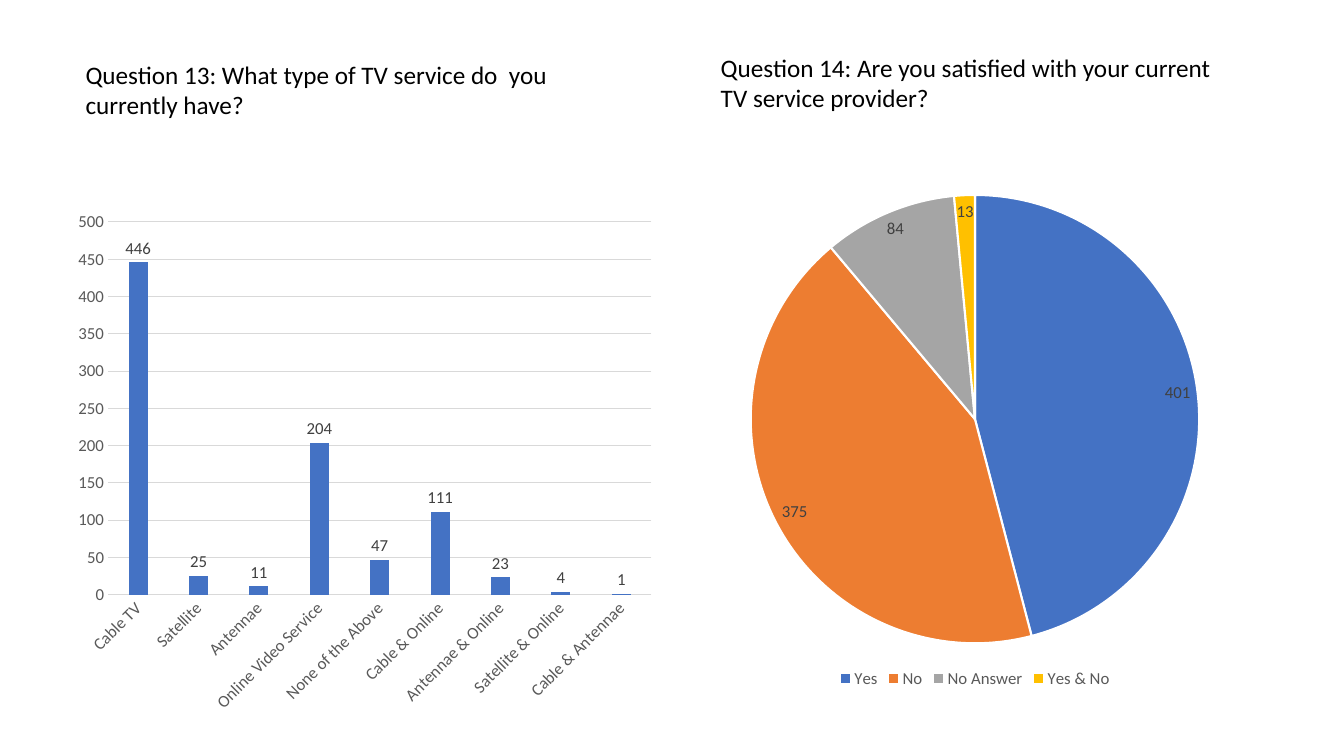
from dataclasses import dataclass

from pptx import Presentation
from pptx import util as u
from pptx.chart import data as cd
from pptx.dml.color import RGBColor
from pptx.enum import chart as ce
from pptx.enum import text as te


@dataclass(frozen=True)
class Theme:
    """Colours, font and type sizes."""
    font: str = "Calibri"
    head: int = 18
    label: int = 12
    base: int = 10
    black: str = "000000"
    dark: str = "404040"
    grey: str = "595959"
    rule: str = "D9D9D9"
    white: str = "FFFFFF"
    fills: tuple[str, ...] = ("4472C4", "ED7D31", "A5A5A5", "FFC000")


@dataclass(frozen=True)
class Box:
    """Place of an item in inches."""
    left: float
    top: float
    width: float
    height: float

    def emu(self) -> list[int]:
        """Give the four lengths."""
        return [u.Inches(n) for n in (self.left, self.top, self.width, self.height)]


@dataclass(frozen=True)
class Query:
    """A survey question with its chart."""
    title: str
    head: Box
    plot: Box
    kind: ce.XL_CHART_TYPE
    votes: dict[str, int]


THEME = Theme()
QUERIES = (
    Query("Question 13: What type of TV service do  you currently have?",
          Box(0.75, 0.54, 5.25, 0.71), Box(0.66, 2, 5.92, 5.17),
          ce.XL_CHART_TYPE.COLUMN_CLUSTERED,
          {"Cable TV": 446, "Satellite": 25, "Antennae": 11,
           "Online Video Service": 204, "None of the Above": 47,
           "Cable & Online": 111, "Antennae & Online": 23,
           "Satellite & Online": 4, "Cable & Antennae": 1}),
    Query("Question 14: Are you satisfied with your current TV service provider?",
          Box(7.05, 0.47, 5.25, 0.71), Box(6.75, 1.54, 5.84, 5.33),
          ce.XL_CHART_TYPE.PIE,
          {"Yes": 401, "No": 375, "No Answer": 84, "Yes & No": 13}),
)


def style(font, size: int, tint: str) -> None:
    """Set face, size and colour of a font."""
    font.name, font.size = THEME.font, u.Pt(size)
    font.color.rgb = RGBColor.from_string(tint)


def paint(fill, tint: str) -> None:
    """Fill with one colour."""
    fill.solid()
    fill.fore_color.rgb = RGBColor.from_string(tint)


def stroke(line, tint: str, width: float) -> None:
    """Set the colour and width of a line."""
    paint(line.fill, tint)
    line.width = u.Pt(width)


def add_head(slide, query: Query) -> None:
    """Write the question above its chart."""
    frame = slide.shapes.add_textbox(*query.head.emu()).text_frame
    frame.word_wrap = True
    frame.auto_size = te.MSO_AUTO_SIZE.SHAPE_TO_FIT_TEXT
    run = frame.paragraphs[0].add_run()
    run.text = query.title
    style(run.font, THEME.head, THEME.black)


def add_plot(slide, query: Query):
    """Place a chart with value labels."""
    data = cd.CategoryChartData()
    data.categories = list(query.votes)
    data.add_series("Series 1", list(query.votes.values()))
    chart = slide.shapes.add_chart(query.kind, *query.plot.emu(), data).chart
    chart.has_title = chart.has_legend = False
    style(chart.font, THEME.base, THEME.black)
    plot = chart.plots[0]
    plot.has_data_labels = True
    plot.data_labels.show_value = True
    plot.data_labels.show_percentage = False
    style(plot.data_labels.font, THEME.label, THEME.dark)
    return chart


def dress_bars(chart) -> None:
    """Format columns, axes and grid."""
    plot = chart.plots[0]
    plot.vary_by_categories = False
    plot.gap_width, plot.overlap = 219, -27
    plot.data_labels.position = ce.XL_LABEL_POSITION.OUTSIDE_END
    paint(plot.series[0].format.fill, THEME.fills[0])
    plot.series[0].invert_if_negative = False
    cats, vals = chart.category_axis, chart.value_axis
    for axis in (cats, vals):
        axis.major_tick_mark = axis.minor_tick_mark = ce.XL_TICK_MARK.NONE
        style(axis.tick_labels.font, THEME.label, THEME.grey)
    stroke(cats.format.line, THEME.rule, 0.75)
    stroke(vals.major_gridlines.format.line, THEME.rule, 0.75)
    vals.format.line.fill.background()
    vals.minimum_scale, vals.maximum_scale, vals.major_unit = 0, 500, 50
    for body in chart.element.xpath(".//c:catAx/c:txPr/a:bodyPr"):
        body.set("rot", "-2700000")


def dress_pie(chart) -> None:
    """Format slices and legend."""
    plot = chart.plots[0]
    plot.vary_by_categories = True
    plot.data_labels.position = ce.XL_LABEL_POSITION.BEST_FIT
    for i, tint in enumerate(THEME.fills):
        slice = plot.series[0].points[i].format
        paint(slice.fill, tint)
        stroke(slice.line, THEME.white, 1.5)
    chart.has_legend = True
    chart.legend.position = ce.XL_LEGEND_POSITION.BOTTOM
    chart.legend.include_in_layout = False
    style(chart.legend.font, THEME.label, THEME.grey)


def main() -> None:
    """Build and save the slide."""
    deck = Presentation()
    deck.slide_width, deck.slide_height = u.Inches(13.33), u.Inches(7.5)
    slide = deck.slides.add_slide(deck.slide_layouts[6])
    for query, dress in zip(QUERIES, (dress_bars, dress_pie)):
        dress(add_plot(slide, query))
    for query in QUERIES:
        add_head(slide, query)
    deck.save("out.pptx")


if __name__ == "__main__":
    main()
